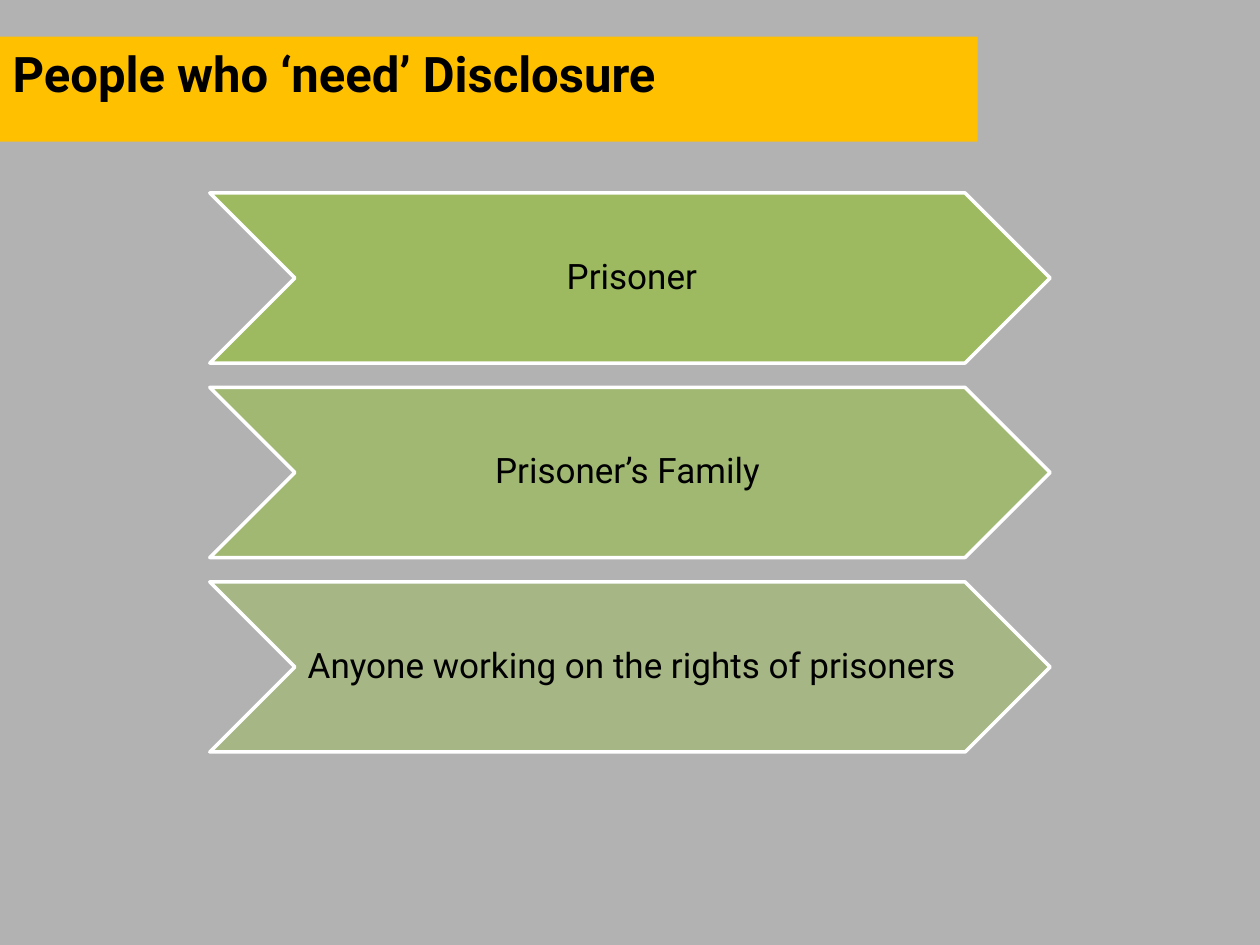
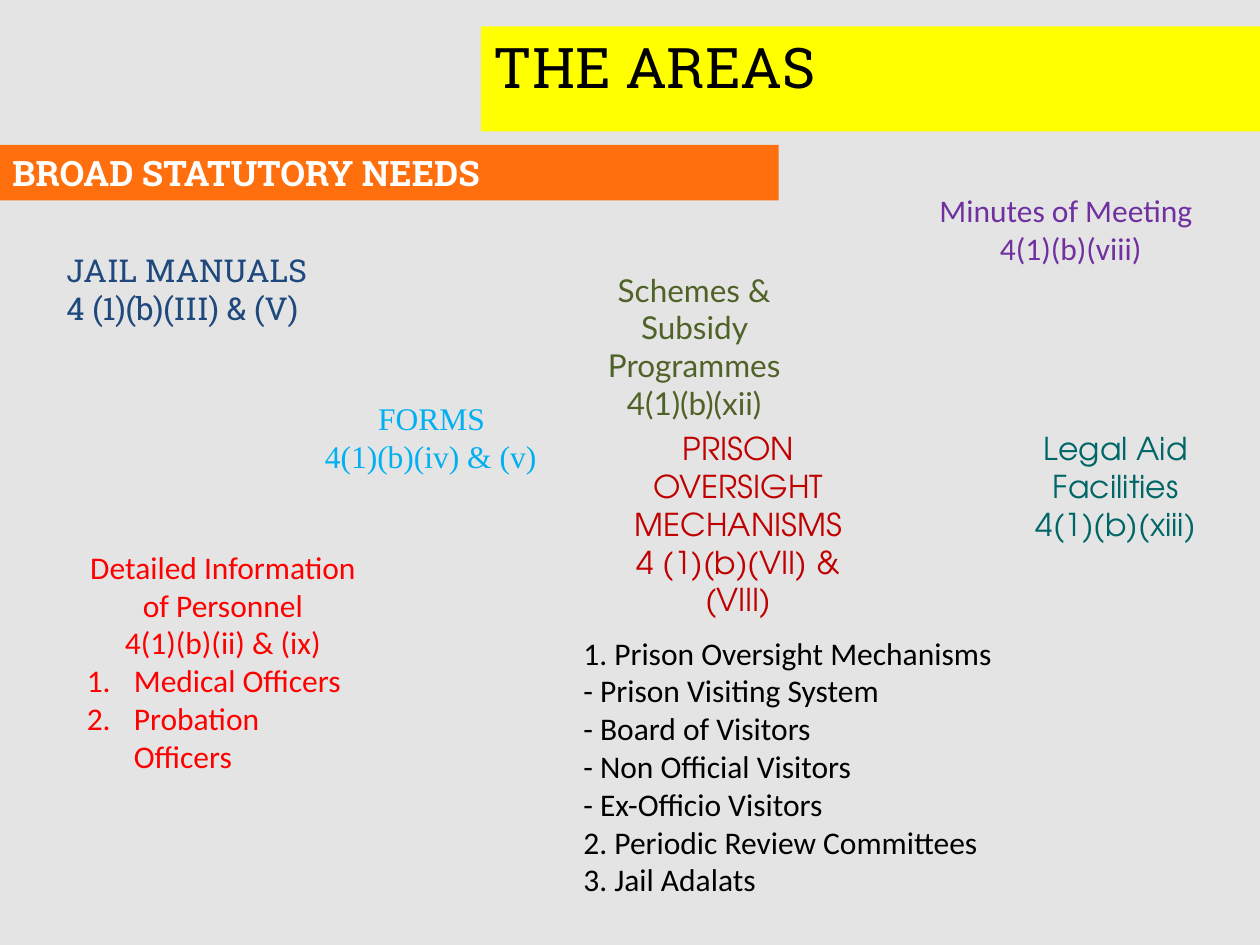
from dataclasses import dataclass
from enum import Enum
from typing import NamedTuple

from lxml.etree import SubElement
from pptx import Presentation
from pptx.dml.color import RGBColor
from pptx.enum.shapes import MSO_SHAPE as Preset
from pptx.enum.text import MSO_ANCHOR as Anchor, MSO_AUTO_SIZE as AutoSize, PP_ALIGN as Align
from pptx.oxml.ns import qn
from pptx.util import Cm, Pt

PAGE_WIDTH, PAGE_HEIGHT = 25.4, 19.05
TITLE_ONLY = 5
BLACK, WHITE = "000000", "FFFFFF"
CHEVRON_GREEN = "9BBB59"
NUMBER_INDENT = Cm(0.95)


class Box(NamedTuple):
    """A place on the page, in centimetres."""
    left: float
    top: float
    width: float
    height: float


@dataclass(frozen=True)
class Type:
    font: str
    size: int
    colour: str
    bold: bool = False


@dataclass(frozen=True)
class Band:
    text: str
    box: Box
    fill: str
    type: Type


class Style(Enum):
    LEFT = "left"
    CENTRE = "centre"
    NUMBERED = "numbered"


class Line(NamedTuple):
    text: str
    style: Style = Style.LEFT


@dataclass(frozen=True)
class Note:
    box: Box
    font: str
    colour: str
    lines: list[Line]


def centred(*texts: str) -> list[Line]:
    return [Line(text, Style.CENTRE) for text in texts]


PEOPLE_TITLE = Band("People who ‘need’ Disclosure", Box(0, 0.74, 19.71, 1.45),
                    "FFC000", Type("Roboto", 28, BLACK, True))
AREAS_TITLE = Band("THE AREAS", Box(9.7, 0.53, 15.7, 1.63),
                   "FFFF00", Type("Roboto Slab", 32, BLACK))
NEEDS_BAND = Band("BROAD STATUTORY NEEDS", Box(0, 2.92, 15.7, 1.12),
                  "FF6F0D", Type("Roboto Slab", 20, WHITE, True))

# Each group of people with the opacity of its chevron, in percent
PEOPLE = [
    ("Prisoner", 90),
    ("Prisoner’s Family ", 70),
    ("Anyone working on the rights of prisoners", 50),
]

NOTES = [
    Note(Box(1.09, 4.93, 5.79, 1.8), "Roboto Slab", "1F497D",
         [Line("JAIL MANUALS"), Line("4 (1)(b)(III) & (V)")]),
    Note(Box(12.09, 8.53, 5.59, 4.11), "TeX Gyre Adventor", "C00000",
         centred("PRISON OVERSIGHT MECHANISMS", "4 (1)(b)(VII) & (VIII)")),
    Note(Box(11.51, 12.65, 8.99, 5.64), "Calibri", BLACK,
         [Line("1. Prison Oversight Mechanisms"),
          Line("- Prison Visiting System"),
          Line("- Board of Visitors"),
          Line("- Non Official Visitors"),
          Line("- Ex-Officio Visitors"),
          Line("2. Periodic Review Committees"),
          Line("3. Jail Adalats")]),
    Note(Box(18.69, 3.73, 5.79, 1.8), "Calibri", "7030A0",
         [Line("Minutes of Meeting"), *centred("4(1)(b)(viii)")]),
    Note(Box(11.1, 5.33, 5.79, 2.57), "Lato", "4F6228",
         centred("Schemes & Subsidy Programmes", "4(1)(b)(xii)")),
    Note(Box(6.3, 7.92, 4.8, 1.8), "Times New Roman", "00B0F0",
         [*centred("FORMS"), Line("4(1)(b)(iv) & (v)")]),
    Note(Box(19.89, 8.53, 5.21, 2.57), "TeX Gyre Adventor", "006666",
         centred("Legal Aid Facilities", "4(1)(b)(xiii)")),
    Note(Box(1.5, 10.92, 5.99, 5.64), "Calibri", "FF0000",
         [*centred("Detailed Information of Personnel", "4(1)(b)(ii) & (ix)"),
          Line("Medical Officers", Style.NUMBERED),
          Line("Probation Officers", Style.NUMBERED)]),
]


def rgb(colour: str) -> RGBColor:
    return RGBColor.from_string(colour)


def lengths(box: Box) -> list[Cm]:
    return [Cm(value) for value in box]


def fill_solid(fill, colour: str) -> None:
    fill.solid()
    fill.fore_color.rgb = rgb(colour)


def set_opacity(shape, percent: int) -> None:
    colour = shape._element.spPr.find(qn("a:solidFill")).find(qn("a:srgbClr"))
    SubElement(colour, qn("a:alpha"), val=str(percent * 1000))


def format_runs(para, style: Type) -> None:
    for span in para.runs:
        span.font.name = style.font
        span.font.size = Pt(style.size)
        span.font.bold = style.bold
        span.font.color.rgb = rgb(style.colour)


def number(para) -> None:
    """Give the paragraph a hanging automatic number."""
    properties = para._p.get_or_add_pPr()
    properties.set("marL", str(NUMBER_INDENT))
    properties.set("indent", str(-NUMBER_INDENT))
    SubElement(properties, qn("a:buFont"), typeface="+mj-lt")
    SubElement(properties, qn("a:buAutoNum"), type="arabicPeriod")


def format_band(shape, band: Band) -> None:
    shape.left, shape.top, shape.width, shape.height = lengths(band.box)
    fill_solid(shape.fill, band.fill)
    shape.line.fill.background()
    frame = shape.text_frame
    frame.text = band.text
    frame.word_wrap = True
    frame.auto_size = AutoSize.SHAPE_TO_FIT_TEXT
    frame.vertical_anchor = Anchor.TOP
    para = frame.paragraphs[0]
    para.alignment = Align.LEFT
    format_runs(para, band.type)


def add_page(deck, background: str, title: Band):
    page = deck.slides.add_slide(deck.slide_layouts[TITLE_ONLY])
    fill_solid(page.background.fill, background)
    format_band(page.shapes.title, title)
    return page


def add_chevron(page, box: Box, text: str, opacity: int) -> None:
    shape = page.shapes.add_shape(Preset.CHEVRON, *lengths(box))
    shape.shadow.inherit = False
    fill_solid(shape.fill, CHEVRON_GREEN)
    set_opacity(shape, opacity)
    shape.line.color.rgb = rgb(WHITE)
    shape.line.width = Pt(2)
    frame = shape.text_frame
    frame.text = text
    frame.word_wrap = True
    frame.vertical_anchor = Anchor.MIDDLE
    frame.margin_left = Cm(0.08)
    frame.margin_right = 0
    frame.margin_top = frame.margin_bottom = Cm(0.03)
    para = frame.paragraphs[0]
    para.alignment = Align.CENTER
    para.line_spacing = 0.9
    format_runs(para, Type("Roboto", 20, BLACK))


def add_note(page, note: Note) -> None:
    frame = page.shapes.add_textbox(*lengths(note.box)).text_frame
    frame.text = "\n".join(line.text for line in note.lines)
    frame.word_wrap = True
    frame.auto_size = AutoSize.SHAPE_TO_FIT_TEXT
    for para, line in zip(frame.paragraphs, note.lines):
        para.alignment = Align.CENTER if line.style is Style.CENTRE else Align.LEFT
        if line.style is Style.NUMBERED:
            number(para)
        format_runs(para, Type(note.font, 18, note.colour))


def build_people_page(deck) -> None:
    page = add_page(deck, "B2B2B2", PEOPLE_TITLE)
    width, height, first_top, pitch = 16.94, 3.43, 3.89, 3.92
    left = (PAGE_WIDTH - width) / 2
    for row, (text, opacity) in enumerate(PEOPLE):
        add_chevron(page, Box(left, first_top + row * pitch, width, height), text, opacity)


def build_areas_page(deck) -> None:
    page = add_page(deck, "E4E4E4", AREAS_TITLE)
    needs = page.shapes.add_shape(Preset.RECTANGLE, *lengths(NEEDS_BAND.box))
    needs.shadow.inherit = False
    format_band(needs, NEEDS_BAND)
    for note in NOTES:
        add_note(page, note)


def main() -> None:
    deck = Presentation()
    deck.slide_width, deck.slide_height = Cm(PAGE_WIDTH), Cm(PAGE_HEIGHT)
    build_people_page(deck)
    build_areas_page(deck)
    deck.save("out.pptx")


if __name__ == "__main__":
    main()
